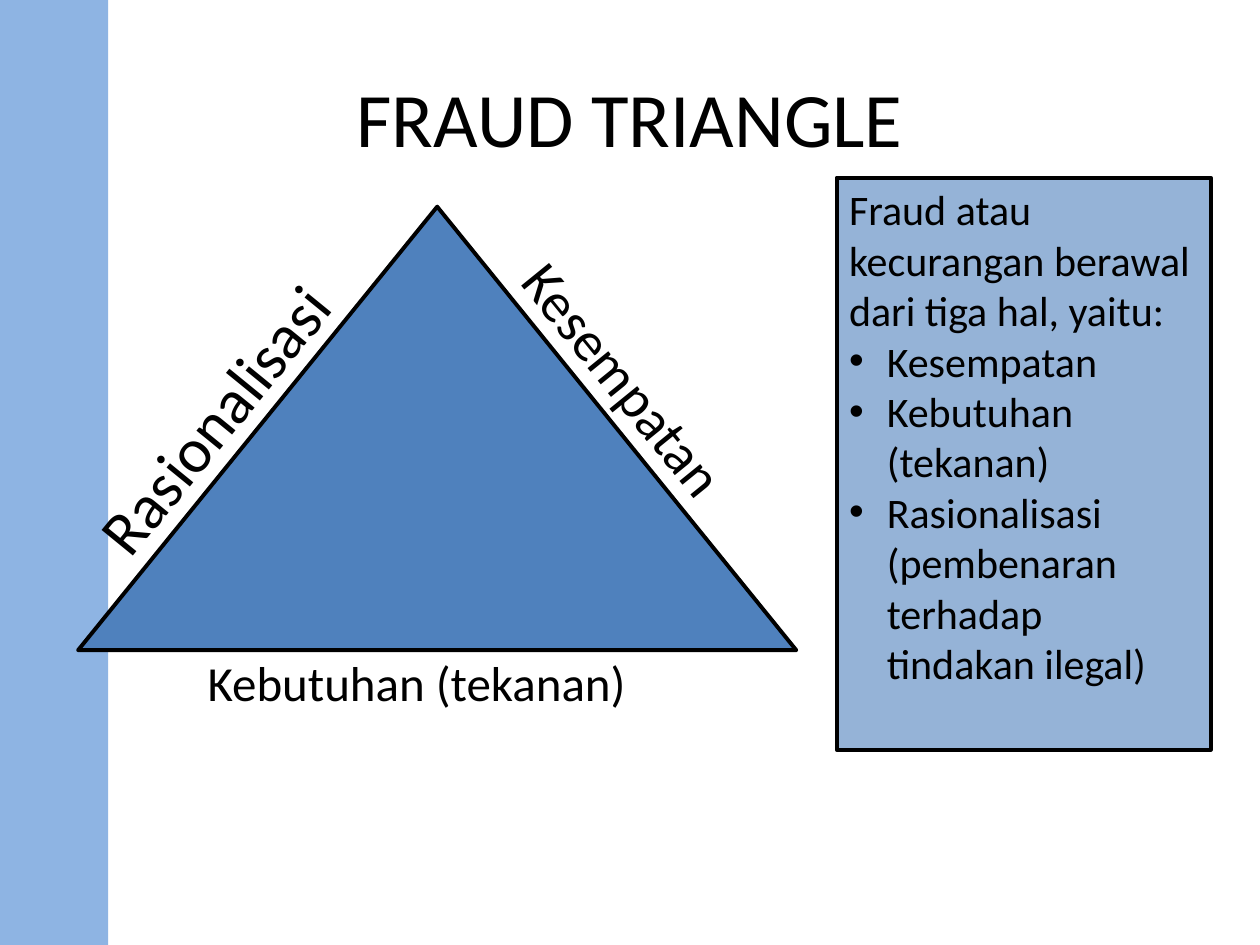
"""Build the Fraud Triangle slide."""
from lxml import etree
from pptx import Presentation
from pptx.dml.color import RGBColor
from pptx.enum.shapes import MSO_SHAPE
from pptx.enum.text import MSO_ANCHOR, MSO_AUTO_SIZE, PP_ALIGN
from pptx.oxml.ns import qn
from pptx.util import Inches, Pt

RECTANGLE = MSO_SHAPE.RECTANGLE
TRIANGLE = MSO_SHAPE.ISOSCELES_TRIANGLE
LEFT, CENTER = PP_ALIGN.LEFT, PP_ALIGN.CENTER
TOP, MIDDLE = MSO_ANCHOR.TOP, MSO_ANCHOR.MIDDLE
GROW = MSO_AUTO_SIZE.SHAPE_TO_FIT_TEXT

BLACK = RGBColor(0x00, 0x00, 0x00)
BAND_BLUE = RGBColor(0x8E, 0xB4, 0xE3)
TRIANGLE_BLUE = RGBColor(0x4F, 0x81, 0xBD)
PANEL_BLUE = RGBColor(0x95, 0xB3, 0xD7)
FONT = "Calibri"

TITLE = "FRAUD TRIANGLE"
SIDE_LABELS = [
    ("Kesempatan", (3.69, 2.8, 2.72, 0.64), 32, 50.9),
    ("Rasionalisasi", (0.24, 2.81, 3.18, 0.71), 36, 309.2),
    ("Kebutuhan (tekanan)", (1.55, 5.13, 3.88, 0.57), 28, 0),
]
INTRODUCTION = "Fraud atau kecurangan berawal dari tiga hal, yaitu:"
CAUSES = [
    "Kesempatan",
    "Kebutuhan (tekanan)",
    "Rasionalisasi (pembenaran terhadap tindakan ilegal)",
]


def add_box(slide, kind, bounds, fill, outlined=True):
    shape = slide.shapes.add_shape(kind, *map(Inches, bounds))
    shape.shadow.inherit = False
    shape.fill.solid()
    shape.fill.fore_color.rgb = fill
    if outlined:
        shape.line.color.rgb = BLACK
        shape.line.width = Pt(2.25)
    else:
        shape.line.fill.background()
    return shape


def format_paragraph(paragraph, size, alignment=LEFT):
    paragraph.alignment = alignment
    for run in paragraph.runs:
        run.font.name = FONT
        run.font.size = Pt(size)
        run.font.color.rgb = BLACK


def add_label(slide, text, bounds, size, alignment=LEFT):
    label = slide.shapes.add_textbox(*map(Inches, bounds))
    label.text_frame.text = text
    format_paragraph(label.text_frame.paragraphs[0], size, alignment)
    return label


def add_bullet(paragraph):
    properties = paragraph._p.get_or_add_pPr()
    properties.set("marL", str(Inches(0.3)))
    properties.set("indent", str(-Inches(0.3)))
    etree.SubElement(properties, qn("a:buFont")).set("typeface", "Arial")
    etree.SubElement(properties, qn("a:buChar")).set("char", "•")


def add_panel(slide):
    panel = add_box(slide, RECTANGLE, (6.64, 1.41, 2.97, 4.54), PANEL_BLUE)
    frame = panel.text_frame
    frame.word_wrap = True
    frame.vertical_anchor = TOP
    frame.text = "\n".join([INTRODUCTION] + CAUSES)
    for paragraph in frame.paragraphs[1:]:
        add_bullet(paragraph)
    for paragraph in frame.paragraphs:
        format_paragraph(paragraph, 24)


def main():
    presentation = Presentation()
    presentation.slide_width = Inches(10)
    presentation.slide_height = Inches(7.5)
    slide = presentation.slides.add_slide(presentation.slide_layouts[6])

    add_box(slide, RECTANGLE, (0, 0, 0.86, 7.5), BAND_BLUE, outlined=False)
    title = add_label(slide, TITLE, (0.5, 0.3, 9, 1.25), 44, CENTER)
    title.text_frame.word_wrap = True
    title.text_frame.vertical_anchor = MIDDLE

    add_box(slide, TRIANGLE, (0.62, 1.64, 5.7, 3.52), TRIANGLE_BLUE)
    for text, bounds, size, rotation in SIDE_LABELS:
        label = add_label(slide, text, bounds, size)
        label.rotation = rotation
        label.text_frame.word_wrap = False
        label.text_frame.auto_size = GROW
    add_panel(slide)
    presentation.save("out.pptx")


if __name__ == "__main__":
    main()
